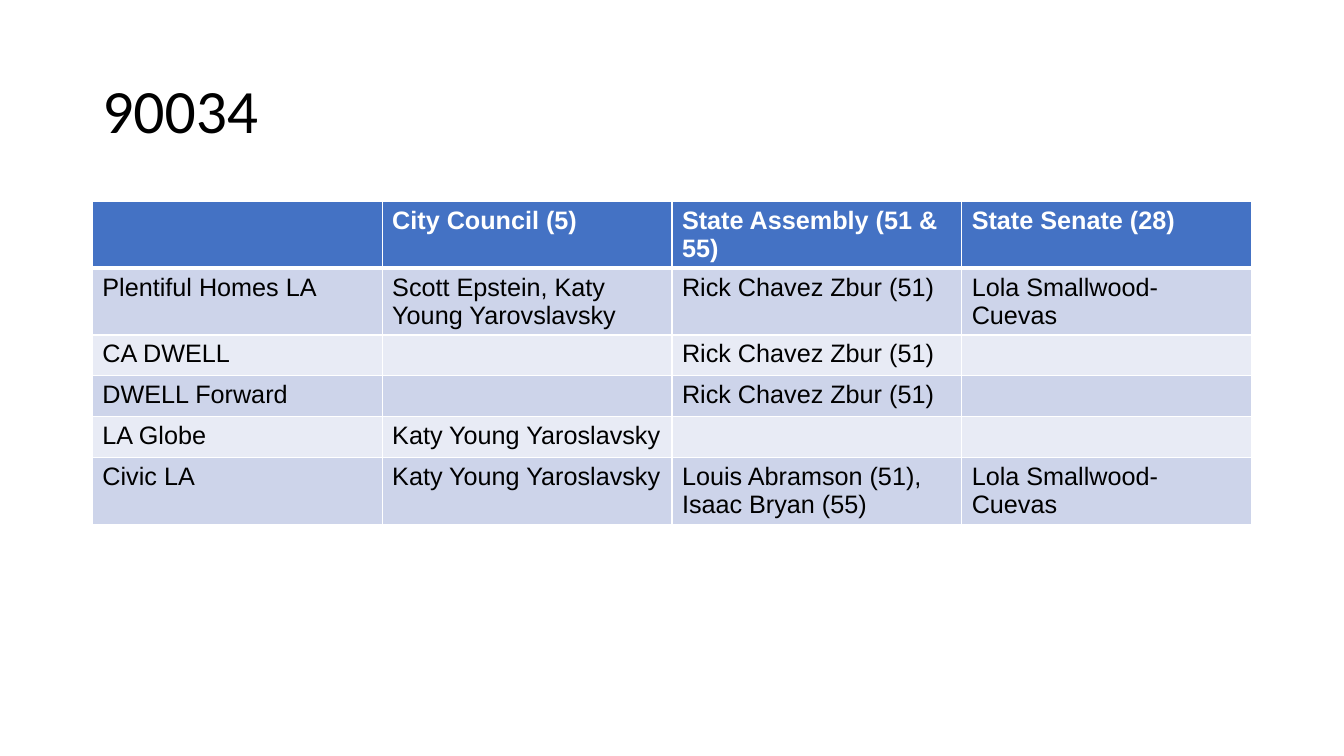
from dataclasses import dataclass

from lxml import etree
from pptx import Presentation
from pptx.dml.color import RGBColor
from pptx.enum import text
from pptx.oxml import ns
from pptx.util import Pt


@dataclass(frozen=True)
class Theme:
    title_font: str = "Calibri"
    table_font: str = "Arial"
    title_size: int = 44
    table_size: int = 18
    ink: str = "000000"
    white: str = "FFFFFF"
    header: str = "4472C4"
    bands: tuple = ("E8EBF5", "CDD4EA")


def style_font(para, name, size, color, bold=False):
    para.font.name = name
    para.font.size = Pt(size)
    para.font.bold = bold
    para.font.color.rgb = RGBColor.from_string(color)


def add_borders(cell, widths, color):
    """Draw the left, right, top and bottom borders, with widths in points."""
    properties = cell._tc.get_or_add_tcPr()
    for side, width in zip("LRTB", widths):
        line = etree.SubElement(properties, ns.qn(f"a:ln{side}"), w=str(Pt(width)))
        fill = etree.SubElement(line, ns.qn("a:solidFill"))
        etree.SubElement(fill, ns.qn("a:srgbClr"), val=color)


theme = Theme()
endorsements = [
    ["", "City Council (5)", "State Assembly (51 & 55)", "State Senate (28)"],
    ["Plentiful Homes LA", "Scott Epstein, Katy Young Yarovslavsky",
     "Rick Chavez Zbur (51)", "Lola Smallwood-Cuevas"],
    ["CA DWELL", "", "Rick Chavez Zbur (51)", ""],
    ["DWELL Forward", "", "Rick Chavez Zbur (51)", ""],
    ["LA Globe", "Katy Young Yaroslavsky", "", ""],
    ["Civic LA", "Katy Young Yaroslavsky",
     "Louis Abramson (51), Isaac Bryan (55)", "Lola Smallwood-Cuevas"],
]
left, column_width, row_height = 66, 207, 29.2

deck = Presentation()
deck.slide_width, deck.slide_height = Pt(960), Pt(540)
page = deck.slides.add_slide(deck.slide_layouts[6])

# Title
title = page.shapes.add_textbox(Pt(left), Pt(28.75), Pt(828), Pt(104.4))
title.text_frame.word_wrap = True
title.text_frame.vertical_anchor = text.MSO_ANCHOR.MIDDLE
para = title.text_frame.paragraphs[0]
para.text = "90034"
para.line_spacing = 0.9
style_font(para, theme.title_font, theme.title_size, theme.ink)

# Endorsement table
row_count, column_count = len(endorsements), len(endorsements[0])
table = page.shapes.add_table(
    row_count, column_count, Pt(left), Pt(144),
    Pt(column_width * column_count), Pt(row_height * row_count)).table
for column in table.columns:
    column.width = Pt(column_width)
for row in table.rows:
    row.height = Pt(row_height)

for row_index, entries in enumerate(endorsements):
    is_header = row_index == 0
    color = theme.white if is_header else theme.ink
    shade = theme.header if is_header else theme.bands[row_index % 2]
    top = 3 if row_index == 1 else 1
    bottom = 3 if is_header else 1
    for column_index, entry in enumerate(entries):
        cell = table.cell(row_index, column_index)
        cell.margin_bottom = Pt(0.8)
        add_borders(cell, (1, 1, top, bottom), theme.white)
        cell.fill.solid()
        cell.fill.fore_color.rgb = RGBColor.from_string(shade)
        para = cell.text_frame.paragraphs[0]
        para.text = entry
        style_font(para, theme.table_font, theme.table_size, color, is_header)

deck.save("out.pptx")
